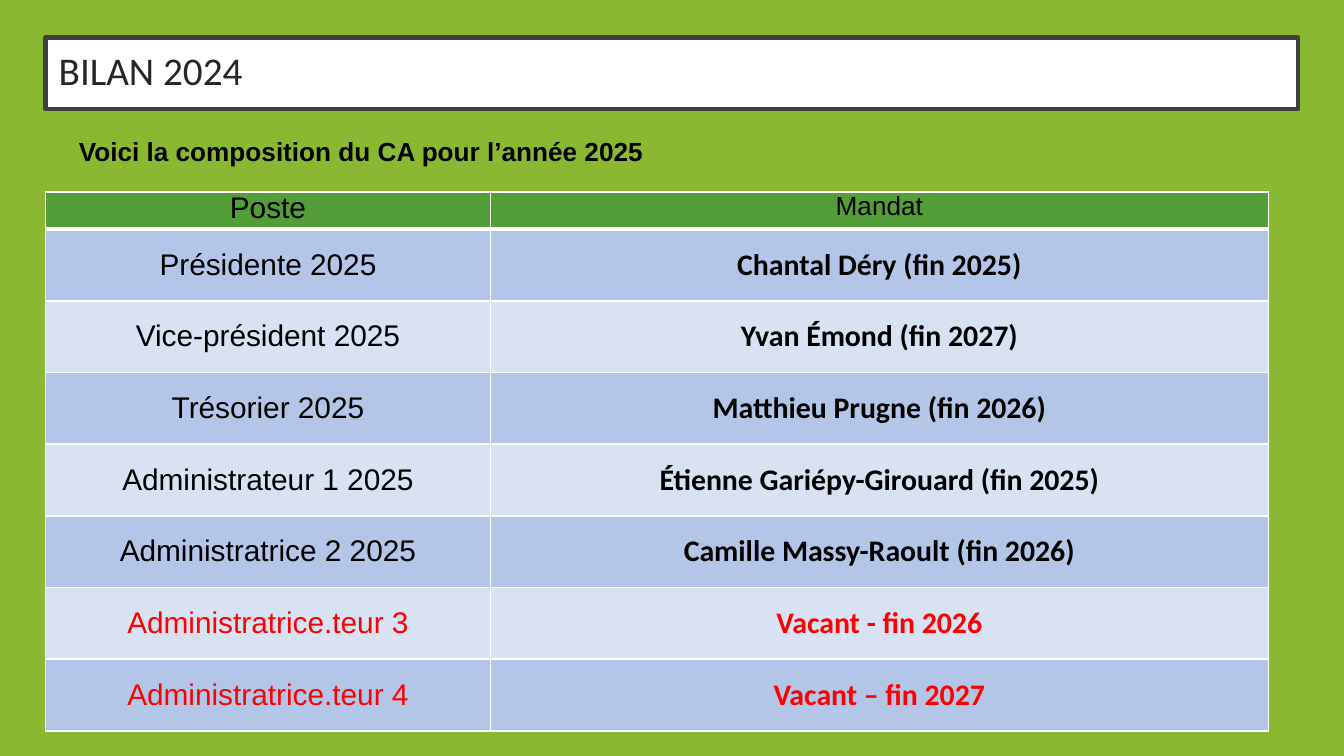
"""Build the slide on the 2025 board of directors."""
from lxml import etree
from pptx import Presentation
from pptx.dml.color import RGBColor
from pptx.enum import text
from pptx.oxml import ns
from pptx.util import Cm, Pt

LIME = RGBColor(0x8A, 0xB8, 0x33)
GREEN = RGBColor(0x54, 0x9E, 0x39)
BLUE = RGBColor(0xB3, 0xC6, 0xE7)
PALE_BLUE = RGBColor(0xD8, 0xE2, 0xF3)
WHITE = RGBColor(0xFF, 0xFF, 0xFF)
BLACK = RGBColor(0x00, 0x00, 0x00)
RED = RGBColor(0xFF, 0x00, 0x00)
CHARCOAL = RGBColor(0x26, 0x26, 0x26)
GREY = RGBColor(0x40, 0x40, 0x40)

HEADINGS = ("Poste", "Mandat")
MEMBERS = (
    ("Présidente 2025", "Chantal Déry (fin 2025)"),
    ("Vice-président 2025", "Yvan Émond (fin 2027)"),
    ("Trésorier 2025", "Matthieu Prugne (fin 2026)"),
    ("Administrateur 1 2025", "Étienne Gariépy-Girouard (fin 2025)"),
    ("Administratrice 2 2025", "Camille Massy-Raoult (fin 2026)"),
    ("Administratrice.teur 3", "Vacant - fin 2026"),
    ("Administratrice.teur 4", "Vacant – fin 2027"),
)


def write(paragraph, wording, size, color, face="Arial", bold=False):
    """Put formatted wording in a paragraph."""
    paragraph.text = wording
    font = paragraph.font
    font.name, font.size, font.bold = face, Pt(size), bold
    font.color.rgb = color


def add_title(slide, wording):
    """Place the framed title."""
    title = slide.shapes.title
    title.left, title.top, title.width, title.height = Cm(0.86), Cm(0.71), Cm(23.67), Cm(1.35)
    title.fill.solid()
    title.fill.fore_color.rgb = WHITE
    title.line.color.rgb = GREY
    title.line.width = Pt(2.5)
    frame = title.text_frame
    frame.margin_left = frame.margin_right = frame.margin_top = frame.margin_bottom = Cm(0.25)
    frame.vertical_anchor = text.MSO_ANCHOR.MIDDLE
    frame.auto_size = text.MSO_AUTO_SIZE.NONE
    heading = frame.paragraphs[0]
    write(heading, wording, 21, CHARCOAL, "Calibri")
    heading.alignment = text.PP_ALIGN.LEFT
    heading.line_spacing = 0.9


def add_introduction(slide, wording):
    """Add the sentence above the table."""
    introduction = slide.shapes.add_textbox(Cm(1.24), Cm(2.44), Cm(21.51), Cm(0.86))
    frame = introduction.text_frame
    frame.word_wrap = True
    frame.auto_size = text.MSO_AUTO_SIZE.SHAPE_TO_FIT_TEXT
    write(frame.paragraphs[0], wording, 14, BLACK, bold=True)


def set_borders(cell, top=1, bottom=1):
    """Draw white borders of the given point widths around a cell."""
    properties = cell._tc.get_or_add_tcPr()
    for side, width in (("L", 1), ("R", 1), ("T", top), ("B", bottom)):
        border = etree.SubElement(properties, ns.qn(f"a:ln{side}"), w=str(Pt(width)))
        fill = etree.SubElement(border, ns.qn("a:solidFill"))
        etree.SubElement(fill, ns.qn("a:srgbClr"), val=str(WHITE))


def format_cell(cell, fill, anchor, top=1, bottom=1):
    """Set the borders, fill, margins and alignment of a cell."""
    set_borders(cell, top, bottom)
    cell.fill.solid()
    cell.fill.fore_color.rgb = fill
    cell.margin_left = cell.margin_right = Cm(0.08)
    cell.margin_top = cell.margin_bottom = 0
    cell.vertical_anchor = anchor
    cell.text_frame.paragraphs[0].alignment = text.PP_ALIGN.CENTER


def add_board_table(slide):
    """Add the table of positions and mandates."""
    frame = slide.shapes.add_table(len(MEMBERS) + 1, 2, Cm(0.86), Cm(3.63), Cm(23.11), Cm(10.18))
    board = frame.table
    for column, width in zip(board.columns, (8.41, 14.7)):
        column.width = Cm(width)
    for row in board.rows:
        row.height = Cm(1.355)
    board.rows[0].height = Cm(0.7)

    for column, (heading, size) in enumerate(zip(HEADINGS, (16, 14))):
        cell = board.cell(0, column)
        format_cell(cell, GREEN, text.MSO_ANCHOR.TOP, bottom=3)
        write(cell.text_frame.paragraphs[0], heading, size, BLACK)

    for row, (position, mandate) in enumerate(MEMBERS, start=1):
        fill = BLUE if row % 2 else PALE_BLUE
        color = RED if mandate.startswith("Vacant") else BLACK
        for column, wording in enumerate((position, mandate)):
            cell = board.cell(row, column)
            format_cell(cell, fill, text.MSO_ANCHOR.MIDDLE, top=3 if row == 1 else 1)
            face = "Calibri" if column else "Arial"
            write(cell.text_frame.paragraphs[0], wording, 16, color, face, bold=column == 1)


def main():
    """Build and save the presentation."""
    deck = Presentation()
    deck.slide_width, deck.slide_height = Cm(25.4), Cm(14.29)
    slide = deck.slides.add_slide(deck.slide_layouts[5])
    slide.background.fill.solid()
    slide.background.fill.fore_color.rgb = LIME
    add_title(slide, "BILAN 2024")
    add_board_table(slide)
    add_introduction(slide, "Voici la composition du CA pour l’année 2025")
    deck.save("out.pptx")


if __name__ == "__main__":
    main()
